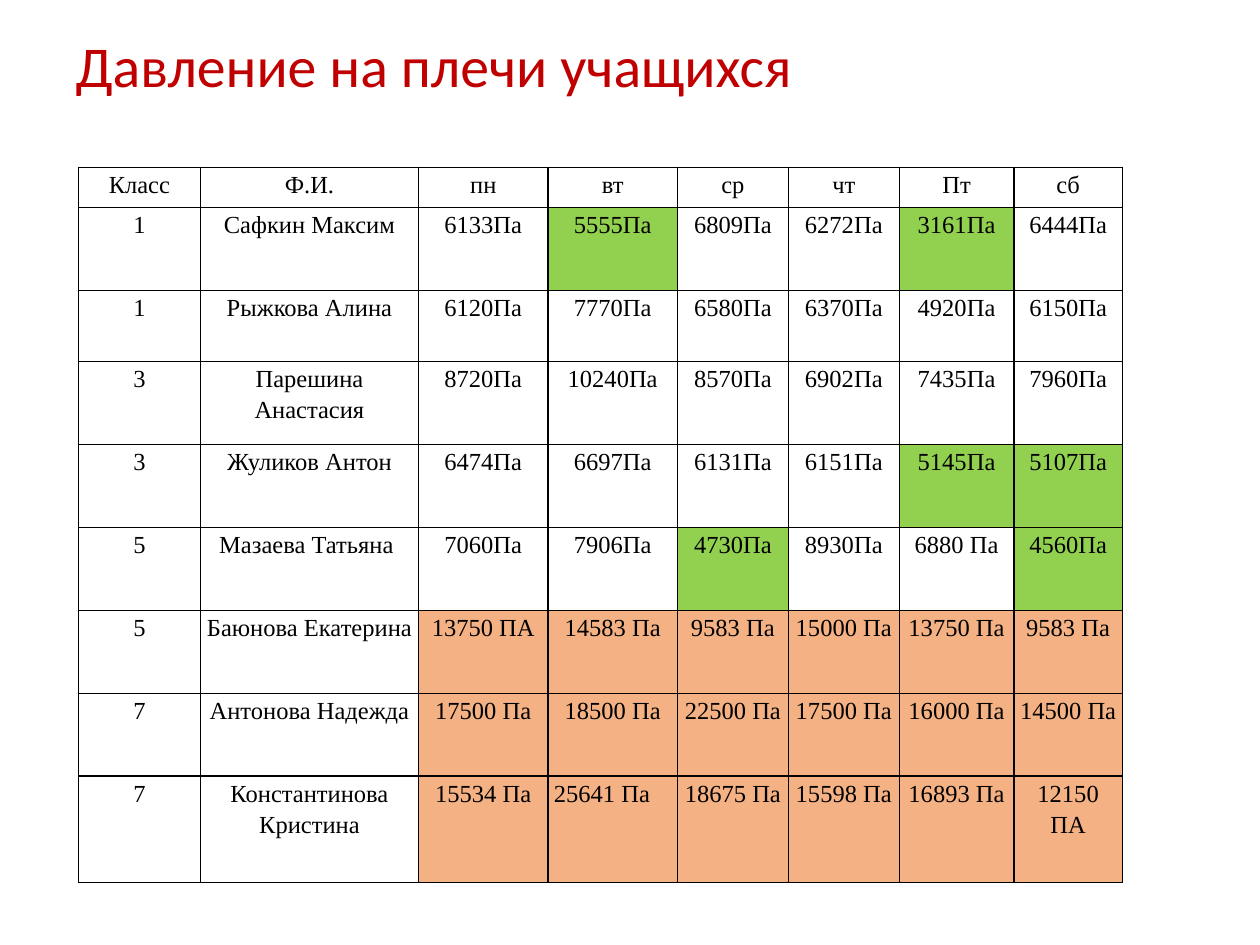
import dataclasses
import typing

import pptx
import pptx.dml.color
import pptx.enum.text
import pptx.oxml
import pptx.oxml.ns
import pptx.table
import pptx.util

Pt = pptx.util.Pt
RGBColor = pptx.dml.color.RGBColor
PP_ALIGN = pptx.enum.text.PP_ALIGN
MSO_ANCHOR = pptx.enum.text.MSO_ANCHOR

BLACK = RGBColor(0x00, 0x00, 0x00)
RED = RGBColor(0xC0, 0x00, 0x00)
GREEN = RGBColor(0x92, 0xD0, 0x50)
ORANGE = RGBColor(0xF4, 0xB1, 0x83)

COLUMN_WIDTHS = (69.8, 124.6, 74, 74, 63.4, 63.4, 65.5, 62)
HEADERS = ("Класс", "Ф.И.", "пн", "вт", "ср", "чт", "Пт", "сб")
HEADER_HEIGHT = 23
FIRST_DAY = 2
DAYS = HEADERS[FIRST_DAY:]


@dataclasses.dataclass(frozen=True)
class Pupil:
    grade: str
    name: str
    pressures: tuple[str, ...]
    light_days: tuple[str, ...] = ()
    overloaded: bool = False
    height: float = 47.4

    def day_fill(self, day: str) -> typing.Optional[RGBColor]:
        if self.overloaded:
            return ORANGE
        return GREEN if day in self.light_days else None


PUPILS = (
    Pupil("1", "Сафкин Максим",
          ("6133Па", "5555Па", "6809Па", "6272Па", "3161Па", "6444Па"),
          light_days=("вт", "Пт")),
    Pupil("1", "Рыжкова Алина",
          ("6120Па", "7770Па", "6580Па", "6370Па", "4920Па", "6150Па"),
          height=40.6),
    Pupil("3", "Парешина Анастасия",
          ("8720Па", "10240Па", "8570Па", "6902Па", "7435Па", "7960Па")),
    Pupil("3", "Жуликов Антон",
          ("6474Па", "6697Па", "6131Па", "6151Па", "5145Па", "5107Па"),
          light_days=("Пт", "сб")),
    Pupil("5", "Мазаева Татьяна ",
          ("7060Па", "7906Па", "4730Па", "8930Па", "6880 Па", "4560Па"),
          light_days=("ср", "сб")),
    Pupil("5", "Баюнова Екатерина",
          ("13750 ПА", "14583 Па", "9583 Па", "15000 Па", "13750 Па", "9583 Па"),
          overloaded=True),
    Pupil("7", "Антонова Надежда",
          ("17500 Па", "18500 Па", "22500 Па", "17500 Па", "16000 Па", "14500 Па"),
          overloaded=True),
    Pupil("7", "Константинова Кристина",
          ("15534 Па", "25641 Па", "18675 Па", "15598 Па", "16893 Па", "12150 ПА"),
          overloaded=True, height=60.7),
)


def add_borders(cell: pptx.table._Cell) -> None:
    tc_pr = cell._tc.get_or_add_tcPr()
    for side in ("lnL", "lnR", "lnT", "lnB"):
        tc_pr.append(pptx.oxml.parse_xml(
            f'<a:{side} {pptx.oxml.ns.nsdecls("a")} w="{Pt(1)}">'
            f'<a:solidFill><a:srgbClr val="{BLACK}"/></a:solidFill></a:{side}>'))


def format_cell(cell: pptx.table._Cell, text: str,
                fill: typing.Optional[RGBColor] = None) -> None:
    add_borders(cell)
    if fill is None:
        cell.fill.background()
    else:
        cell.fill.solid()
        cell.fill.fore_color.rgb = fill
    cell.margin_left = cell.margin_right = Pt(3.4)
    cell.margin_top = cell.margin_bottom = Pt(0)
    cell.vertical_anchor = MSO_ANCHOR.TOP
    p = cell.text_frame.paragraphs[0]
    p.text = text
    p.alignment = PP_ALIGN.CENTER
    p.line_spacing = 1.15
    p.font.name = "Times New Roman"
    p.font.size = Pt(14)
    p.font.color.rgb = BLACK


def add_title(s: pptx.slide.Slide, text: str) -> None:
    sp = s.shapes.title
    sp.left, sp.top, sp.width, sp.height = Pt(36), Pt(0), Pt(648), Pt(78.5)
    tf = sp.text_frame
    tf.auto_size = pptx.enum.text.MSO_AUTO_SIZE.NONE
    tf.vertical_anchor = MSO_ANCHOR.MIDDLE
    p = tf.paragraphs[0]
    p.text = text
    p.alignment = PP_ALIGN.LEFT
    p.line_spacing = 0.9
    p.font.name = "Calibri"
    p.font.size = Pt(33)
    p.font.color.rgb = RED


def add_pressure_table(s: pptx.slide.Slide) -> None:
    heights = (HEADER_HEIGHT, *(pupil.height for pupil in PUPILS))
    table = s.shapes.add_table(
        len(heights), len(HEADERS), Pt(44.8), Pt(95.6),
        Pt(sum(COLUMN_WIDTHS)), Pt(sum(heights))).table
    table.first_row = table.horz_banding = False
    for column, width in zip(table.columns, COLUMN_WIDTHS):
        column.width = Pt(width)
    for row, height in zip(table.rows, heights):
        row.height = Pt(height)
    for col, header in enumerate(HEADERS):
        format_cell(table.cell(0, col), header)
    for row, pupil in enumerate(PUPILS, 1):
        format_cell(table.cell(row, 0), pupil.grade)
        format_cell(table.cell(row, 1), pupil.name)
        for col, (day, value) in enumerate(zip(DAYS, pupil.pressures), FIRST_DAY):
            format_cell(table.cell(row, col), value, pupil.day_fill(day))
    last_tuesday = table.cell(len(PUPILS), HEADERS.index("вт"))
    last_tuesday.text_frame.paragraphs[0].alignment = PP_ALIGN.LEFT


def main() -> None:
    prs = pptx.Presentation()
    prs.slide_width, prs.slide_height = Pt(720), Pt(540)
    s = prs.slides.add_slide(prs.slide_layouts[5])
    add_title(s, "Давление на плечи учащихся")
    add_pressure_table(s)
    prs.save("out.pptx")


if __name__ == "__main__":
    main()
